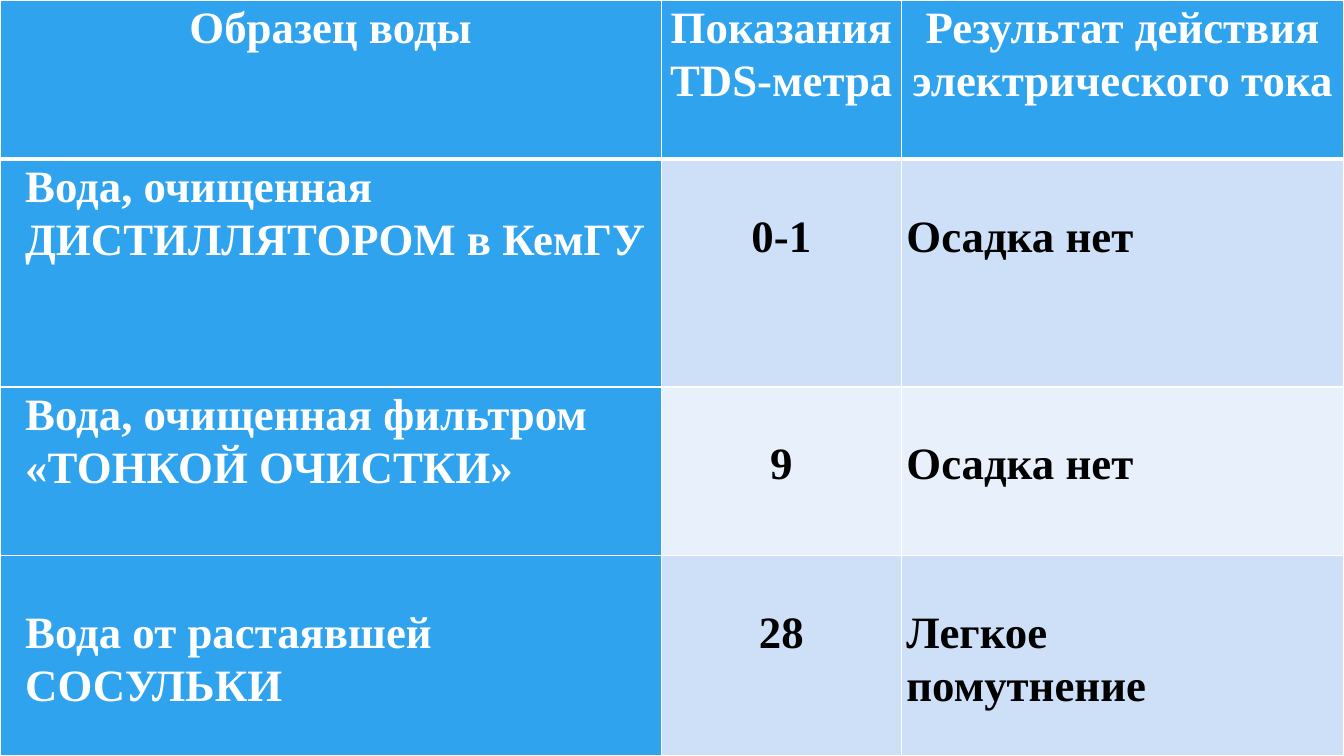
from dataclasses import dataclass

from lxml.etree import SubElement
from pptx import Presentation
from pptx.dml.color import RGBColor
from pptx.enum.text import PP_ALIGN
from pptx.oxml.ns import qn
from pptx.table import _Cell
from pptx.util import Inches, Pt

WHITE, BLACK, BLUE = "FFFFFF", "000000", "2FA3EE"
PALE, LIGHT = "CDE0F8", "E8F0FC"
WIDTHS = (6.56, 2.38, 4.39)
DROP = 0.49  # lowers a text by one line


@dataclass
class Row:
    height: float
    texts: tuple[str, str, str]
    fill: str
    drops: tuple[float, float, float]


ROWS = [
    Row(1.58, ("Образец воды", "Показания TDS-метра",
               "Результат действия электрического тока"), BLUE, (0, 0, 0)),
    Row(2.26, ("Вода, очищенная ДИСТИЛЛЯТОРОМ в КемГУ", "0-1",
               "Осадка нет"), PALE, (0, DROP, DROP)),
    Row(1.67, ("Вода, очищенная фильтром «ТОНКОЙ ОЧИСТКИ»", "9",
               "Осадка нет"), LIGHT, (0, DROP, DROP)),
    Row(1.99, ("Вода от растаявшей СОСУЛЬКИ", "28",
               "Легкое\nпомутнение"), PALE, (DROP, DROP, DROP)),
]
ALIGNS = (PP_ALIGN.LEFT, PP_ALIGN.CENTER, PP_ALIGN.JUSTIFY)


def color(code: str) -> RGBColor:
    return RGBColor.from_string(code)


def border(cell: _Cell, top: float, bottom: float) -> None:
    """Draw white lines on all four sides, with widths in points."""
    props = cell._tc.get_or_add_tcPr()
    sides = {"L": 1, "R": 1, "T": top, "B": bottom}
    for place, (side, width) in enumerate(sides.items()):
        line = SubElement(props, qn(f"a:ln{side}"), w=str(Pt(width)))
        paint = SubElement(line, qn("a:solidFill"))
        SubElement(paint, qn("a:srgbClr"), val=WHITE)
        props.insert(place, line)


def write(cell: _Cell, text: str, align: PP_ALIGN, ink: str,
          left: float, drop: float) -> None:
    cell.margin_left, cell.margin_right = Inches(left), Inches(0.05)
    cell.margin_top, cell.margin_bottom = Inches(drop), 0
    cell.text_frame.text = text
    for para in cell.text_frame.paragraphs:
        para.alignment = align
        para.line_spacing = 1.07
        font = para.font
        font.name, font.size, font.bold = "Times New Roman", Pt(32), True
        font.color.rgb = color(ink)


def main() -> None:
    deck = Presentation()
    deck.slide_width, deck.slide_height = Inches(13.33), Inches(7.5)
    slide = deck.slides.add_slide(deck.slide_layouts[6])

    # Background
    back = slide.background.fill
    back.gradient()
    back.gradient_angle = 270
    for stop, code in zip(back.gradient_stops, (WHITE, "B9B9B9")):
        stop.color.rgb = color(code)

    # Table of water samples
    height = sum(row.height for row in ROWS)
    table = slide.shapes.add_table(
        len(ROWS), len(WIDTHS), 0, 0,
        Inches(sum(WIDTHS)), Inches(height)).table
    table.first_col = True
    for col, width in zip(table.columns, WIDTHS):
        col.width = Inches(width)

    for r, row in enumerate(ROWS):
        table.rows[r].height = Inches(row.height)
        for c, text in enumerate(row.texts):
            cell = table.cell(r, c)
            head = r == 0
            label = head or c == 0
            cell.fill.solid()
            cell.fill.fore_color.rgb = color(BLUE if label else row.fill)
            border(cell, 3 if r == 1 else 1, 3 if head else 1)
            write(cell, text, PP_ALIGN.CENTER if head else ALIGNS[c],
                  WHITE if label else BLACK,
                  0.25 if c == 0 and not head else 0.05, row.drops[c])

    deck.save("out.pptx")


if __name__ == "__main__":
    main()
